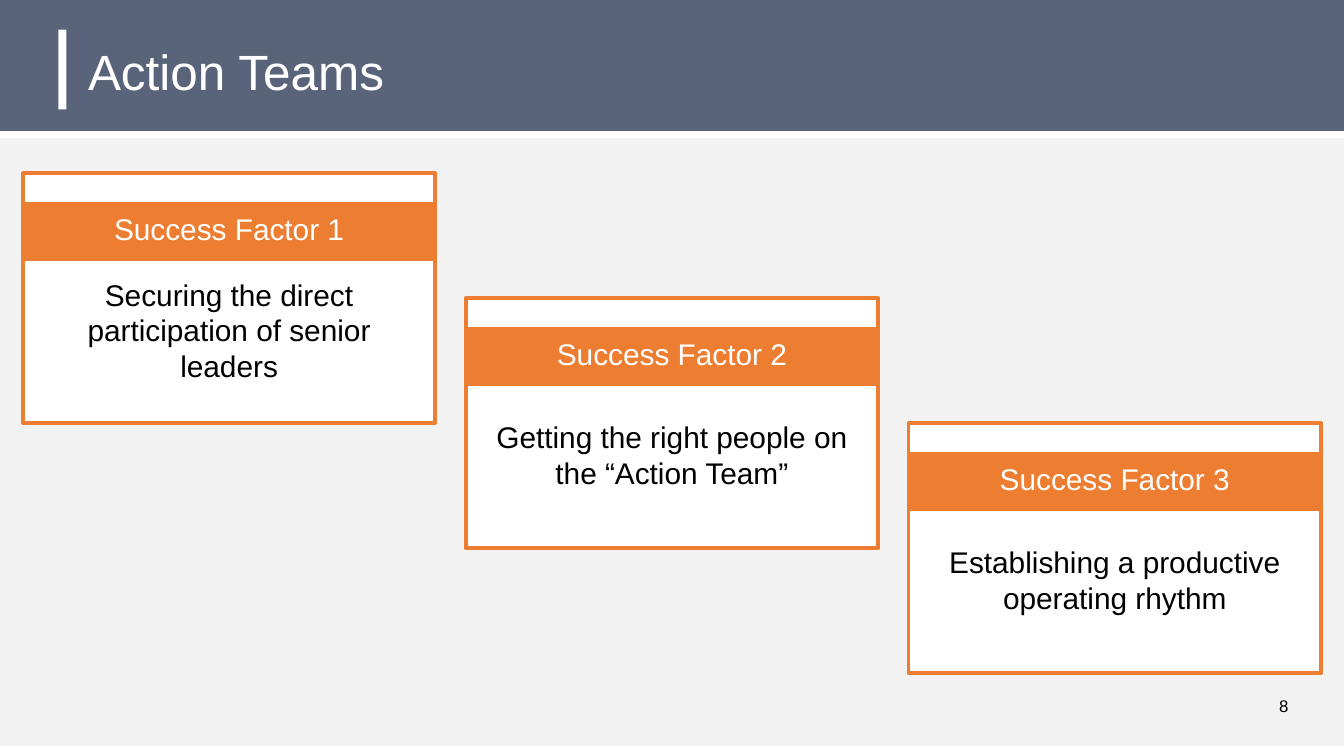
from pptx import Presentation
from pptx.dml.color import RGBColor
from pptx.enum.shapes import MSO_SHAPE
from pptx.enum.text import MSO_ANCHOR, PP_ALIGN
from pptx.util import Pt

RECT = MSO_SHAPE.RECTANGLE
TOP, MIDDLE = MSO_ANCHOR.TOP, MSO_ANCHOR.MIDDLE
LEFT, CENTER = PP_ALIGN.LEFT, PP_ALIGN.CENTER

PX = 4572  # 200 px to the inch
WHITE = RGBColor(0xFF, 0xFF, 0xFF)
BLACK = RGBColor(0, 0, 0)
SLATE = RGBColor(0x59, 0x64, 0x7A)
GREY = RGBColor(0xF2, 0xF2, 0xF2)
ORANGE = RGBColor(0xED, 0x7D, 0x31)

FACTORS = [
    "Securing the direct participation of senior leaders",
    "Getting the right people on the “Action Team”",
    "Establishing a productive operating rhythm",
]
CARD_W, CARD_H = 614, 372
STEP_X, STEP_Y = 659, 186

prs = Presentation()
prs.slide_width, prs.slide_height = 2000 * PX, 1125 * PX
s = prs.slides.add_slide(prs.slide_layouts[5])


def add_rect(x, y, w, h, fill, line=None):
    sp = s.shapes.add_shape(RECT, x * PX, y * PX, w * PX, h * PX)
    sp.shadow.inherit = False
    sp.fill.solid()
    sp.fill.fore_color.rgb = fill
    if line is None:
        sp.line.fill.background()
    else:
        sp.line.color.rgb = line
        sp.line.width = Pt(2)
    return sp


def write(sp, text, size, color, align, anchor):
    tf = sp.text_frame
    tf.text = text
    tf.word_wrap = True
    tf.vertical_anchor = anchor
    p = tf.paragraphs[0]
    p.alignment = align
    font = p.runs[0].font
    font.name, font.size, font.color.rgb = "Arial", Pt(size), color
    return tf


# Header band, accent bar and body background
add_rect(-4, -2, 2014, 197, SLATE)
add_rect(87, 44, 12, 119, WHITE)
add_rect(0, 206, 2000, 904, GREY)

# Title, moved in front of the header band
title = s.shapes.title
title.element.getparent().append(title.element)
title.left, title.top, title.width, title.height = 111 * PX, 20 * PX, 1546 * PX, 182 * PX
tf = write(title, "Action Teams", 26.5, WHITE, LEFT, MIDDLE)
tf.margin_left = tf.margin_right = tf.margin_top = tf.margin_bottom = 20 * PX
tf.paragraphs[0].line_spacing = 0.9

# Slide number
number = s.shapes.add_textbox(1884 * PX, 1026 * PX, 100 * PX, 54 * PX)
write(number, "8", 9, BLACK, LEFT, TOP)

# Cards stepping down to the right
for i, factor in enumerate(FACTORS):
    x, y = 34 + i * STEP_X, 258 + i * STEP_Y
    card = add_rect(x, y, CARD_W, CARD_H, WHITE, ORANGE)
    tf = write(card, factor, 16, BLACK, CENTER, MIDDLE)
    tf.margin_top = 104 * PX  # keeps the text below the heading band
    heading = add_rect(x, y + 46, CARD_W, 82, ORANGE, ORANGE)
    write(heading, f"Success Factor {i + 1}", 16, WHITE, CENTER, TOP)

prs.save("out.pptx")
